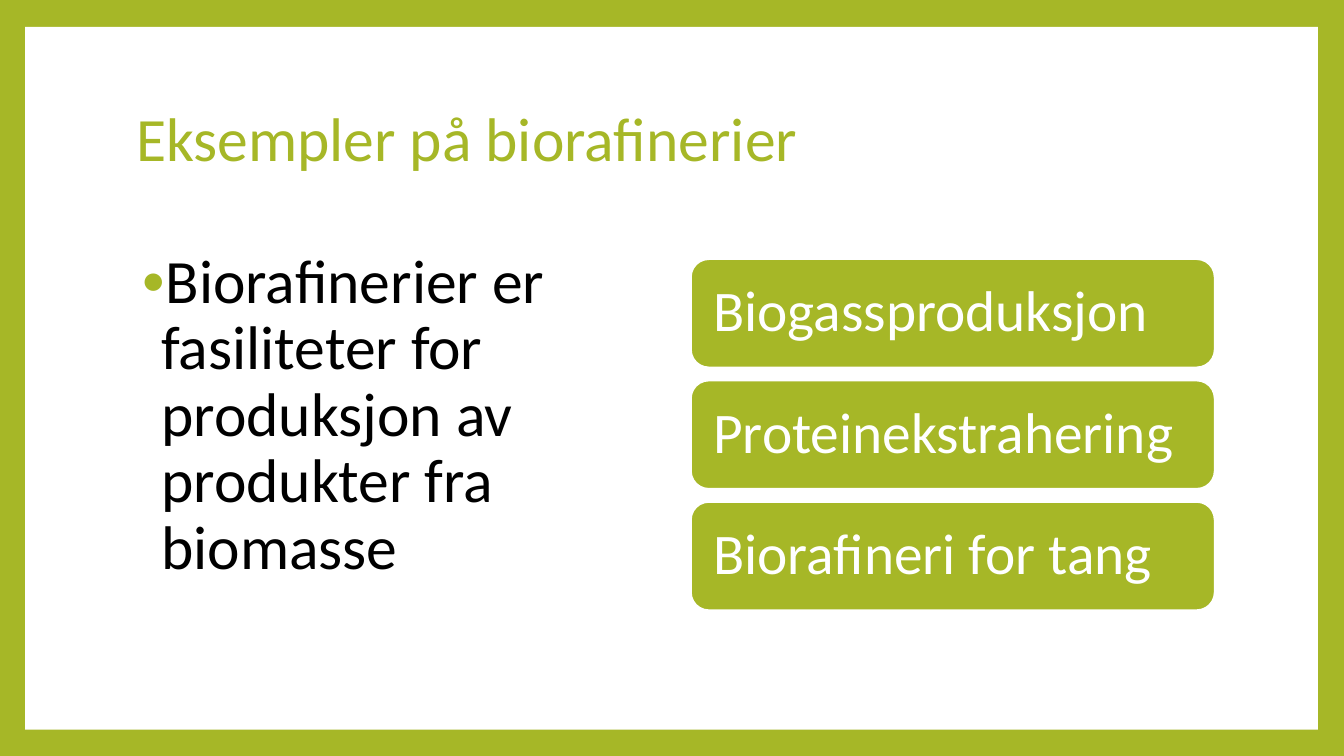
from lxml.etree import SubElement
from pptx import Presentation
from pptx.dml.color import RGBColor
from pptx.enum.shapes import MSO_SHAPE
from pptx.enum.text import MSO_ANCHOR, MSO_AUTO_SIZE, PP_ALIGN
from pptx.oxml.ns import qn
from pptx.util import Pt

GREEN = RGBColor(0xA6, 0xB7, 0x27)
WHITE = RGBColor(0xFF, 0xFF, 0xFF)
BLACK = RGBColor(0x00, 0x00, 0x00)
FONT = "Calibri"


def write_text(shape, text, size, color, anchor):
    frame = shape.text_frame
    frame.word_wrap = True
    frame.auto_size = MSO_AUTO_SIZE.NONE
    frame.vertical_anchor = anchor
    paragraph = frame.paragraphs[0]
    paragraph.alignment = PP_ALIGN.LEFT
    paragraph.line_spacing = 0.9
    run = paragraph.add_run()
    run.text = text
    run.font.name = FONT
    run.font.size = Pt(size)
    run.font.color.rgb = color
    return paragraph


def place(shape, left, top, width, height):
    shape.left, shape.top = Pt(left), Pt(top)
    shape.width, shape.height = Pt(width), Pt(height)


presentation = Presentation()
presentation.slide_width = Pt(960)
presentation.slide_height = Pt(540)
slide = presentation.slides.add_slide(presentation.slide_layouts[1])
slide.background.fill.solid()
slide.background.fill.fore_color.rgb = GREEN

panel = slide.shapes.add_shape(MSO_SHAPE.RECTANGLE, Pt(18), Pt(19.2), Pt(923.4), Pt(502))
panel.shadow.inherit = False
panel.fill.solid()
panel.fill.fore_color.rgb = WHITE
panel.line.fill.background()
slide.shapes.title.element.addprevious(panel.element)

title = slide.shapes.title
place(title, 90, 48, 777.6, 106.6)
write_text(title, "Eksempler på biorafinerier", 44, GREEN, MSO_ANCHOR.MIDDLE)

body = slide.placeholders[1]
place(body, 90, 175, 374.4, 304)
paragraph = write_text(
    body,
    "Biorafinerier er fasiliteter for produksjon av produkter fra biomasse",
    44, BLACK, MSO_ANCHOR.TOP,
)
paragraph.space_before = Pt(14)
properties = paragraph._p.get_or_add_pPr()
properties.set("marL", str(Pt(18)))
properties.set("indent", str(Pt(-14.4)))
bullet_color = SubElement(properties, qn("a:buClr"))
SubElement(bullet_color, qn("a:srgbClr")).set("val", str(GREEN))
SubElement(properties, qn("a:buSzPct")).set("val", "80000")
SubElement(properties, qn("a:buFont")).set("typeface", FONT)
SubElement(properties, qn("a:buChar")).set("char", "•")

examples = ["Biogassproduksjon", "Proteinekstrahering", "Biorafineri for tang"]
for index, example in enumerate(examples):
    box = slide.shapes.add_shape(
        MSO_SHAPE.ROUNDED_RECTANGLE, Pt(493.4), Pt(185 + index * 86.7), Pt(374.4), Pt(77.6)
    )
    box.shadow.inherit = False
    box.fill.solid()
    box.fill.fore_color.rgb = GREEN
    box.line.color.rgb = WHITE
    box.line.width = Pt(1.5)
    box.text_frame.margin_left = box.text_frame.margin_right = Pt(12.4)
    write_text(box, example, 41, WHITE, MSO_ANCHOR.MIDDLE)

presentation.save("out.pptx")
